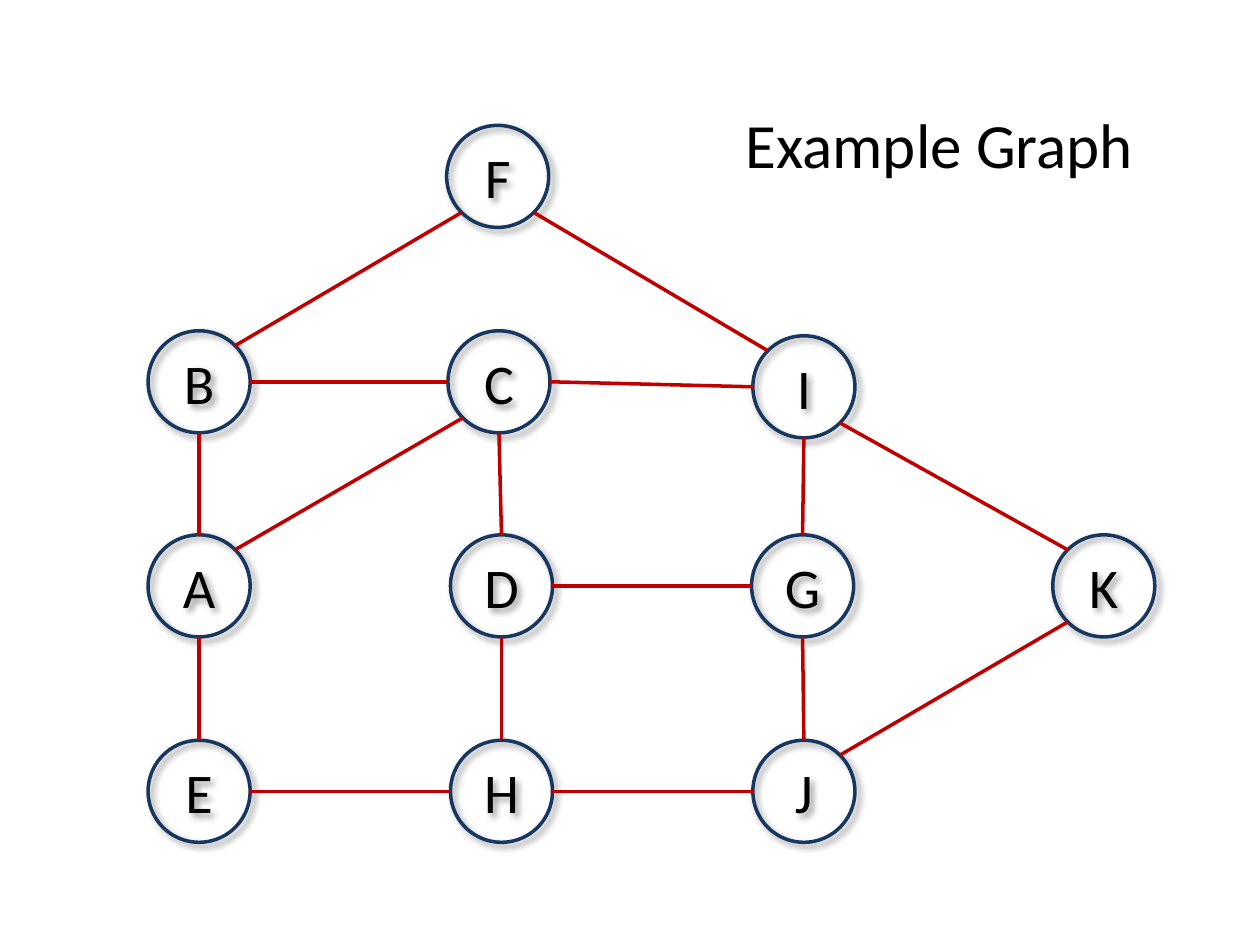
from math import cos, radians, sin

from pptx import Presentation
from pptx.dml.color import RGBColor
from pptx.enum.shapes import MSO_CONNECTOR, MSO_SHAPE
from pptx.enum.text import MSO_ANCHOR, PP_ALIGN
from pptx.oxml import parse_xml
from pptx.oxml.ns import nsdecls, qn
from pptx.util import Inches, Pt
from lxml.etree import SubElement

NAVY = RGBColor(0x17, 0x37, 0x5E)
RED = RGBColor(0xC0, 0x00, 0x00)
BLACK = RGBColor(0x00, 0x00, 0x00)
FONT = "Calibri"

# Content: node centres in inches, and edges as (node, side, node, side)
TITLE = "Example Graph"
NODES = {
    "F": (3.95, 1.4),
    "B": (1.58, 3.03), "C": (3.96, 3.03), "I": (6.38, 3.07),
    "A": (1.58, 4.65), "D": (3.98, 4.65), "G": (6.37, 4.65), "K": (8.76, 4.65),
    "E": (1.58, 6.28), "H": (3.98, 6.28), "J": (6.38, 6.28),
}
EDGES = [
    ("F", "bottom left", "B", "top right"), ("F", "bottom right", "I", "top left"),
    ("B", "right", "C", "left"), ("C", "right", "I", "left"),
    ("B", "bottom", "A", "top"), ("C", "bottom left", "A", "top right"),
    ("C", "bottom", "D", "top"), ("I", "bottom", "G", "top"),
    ("I", "bottom right", "K", "top left"), ("D", "right", "G", "left"),
    ("A", "bottom", "E", "top"), ("D", "bottom", "H", "top"),
    ("G", "bottom", "J", "top"), ("K", "bottom left", "J", "top right"),
    ("E", "right", "H", "left"), ("H", "right", "J", "left"),
]
# Connection sites of an ellipse, counter-clockwise from the top
SIDES = ["top", "top left", "left", "bottom left",
         "bottom", "bottom right", "right", "top right"]
DIAMETER = 0.81
SHADOW = (
    f'<a:effectLst {nsdecls("a")}>'
    f'<a:outerShdw blurRad="{Pt(4)}" dist="{Pt(3)}" dir="2700000" algn="tl" rotWithShape="0">'
    '<a:srgbClr val="000000"><a:alpha val="40000"/></a:srgbClr>'
    '</a:outerShdw></a:effectLst>'
)


def add_node(slide, letter, x, y):
    radius = DIAMETER / 2
    node = slide.shapes.add_shape(
        MSO_SHAPE.OVAL, Inches(x - radius), Inches(y - radius),
        Inches(DIAMETER), Inches(DIAMETER))
    node.fill.background()
    node.line.color.rgb = NAVY
    node.line.width = Pt(2)
    node._element.spPr.append(parse_xml(SHADOW))
    frame = node.text_frame
    frame.margin_left = frame.margin_right = 0
    frame.vertical_anchor = MSO_ANCHOR.MIDDLE
    set_text(frame, letter, 32)
    return node


def set_text(frame, text, size):
    frame.text = text
    paragraph = frame.paragraphs[0]
    paragraph.alignment = PP_ALIGN.CENTER
    paragraph.font.name = FONT
    paragraph.font.size = Pt(size)
    paragraph.font.color.rgb = BLACK


def site_point(letter, side):
    x, y = NODES[letter]
    angle = radians(90 + 45 * SIDES.index(side))
    return (Inches(x + DIAMETER / 2 * cos(angle)),
            Inches(y - DIAMETER / 2 * sin(angle)))


def add_edge(slide, circles, start, start_side, end, end_side):
    edge = slide.shapes.add_connector(
        MSO_CONNECTOR.STRAIGHT,
        *site_point(start, start_side), *site_point(end, end_side))
    edge.line.color.rgb = RED
    edge.line.width = Pt(2)
    SubElement(edge._element.spPr, qn("a:effectLst"))
    # Glue both ends to their circles
    glue = edge._element.nvCxnSpPr.cNvCxnSpPr
    for tag, letter, side in (("a:stCxn", start, start_side), ("a:endCxn", end, end_side)):
        SubElement(glue, qn(tag), id=str(circles[letter].shape_id),
                   idx=str(SIDES.index(side)))


def main():
    prs = Presentation()
    prs.slide_width, prs.slide_height = Inches(10), Inches(7.5)
    slide = prs.slides.add_slide(prs.slide_layouts[5])

    # Title
    title = slide.shapes.title
    title.left, title.top = Inches(5.58), Inches(0.78)
    title.width, title.height = Inches(3.75), Inches(0.71)
    set_text(title.text_frame, TITLE, 36)

    # Graph
    circles = {letter: add_node(slide, letter, x, y) for letter, (x, y) in NODES.items()}
    for edge in EDGES:
        add_edge(slide, circles, *edge)

    prs.save("out.pptx")


if __name__ == "__main__":
    main()
